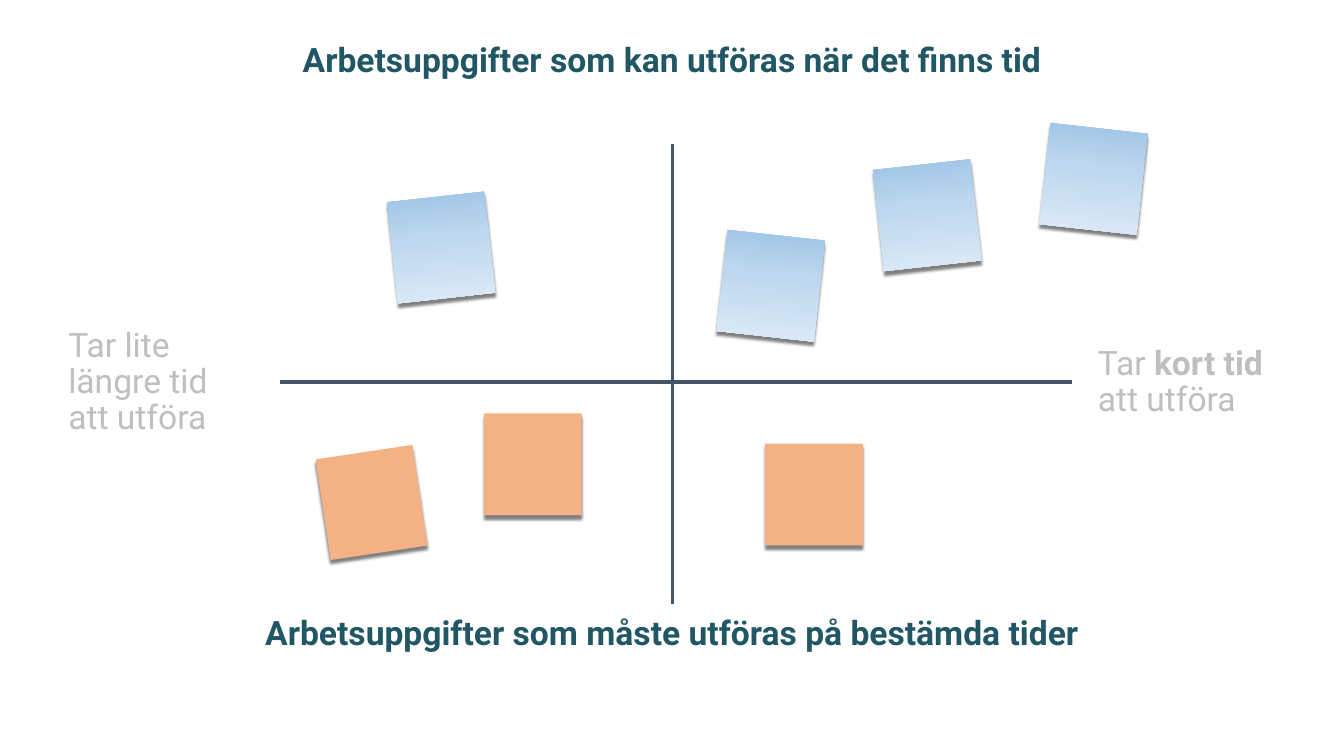
from copy import deepcopy

from lxml.etree import SubElement
from pptx import Presentation
from pptx.dml.color import RGBColor
from pptx.enum.shapes import MSO_CONNECTOR as Link, MSO_SHAPE as Shape
from pptx.enum.text import MSO_ANCHOR as Anchor, MSO_AUTO_SIZE as Fit, PP_ALIGN as Align
from pptx.oxml.ns import qn
from pptx.util import Inches, Pt

WIDE, HIGH = 13.33, 7.5
FONT = "Roboto"
TEAL, GREY, SLATE, WHITE, ORANGE = "215765", "BFBFBF", "44546A", "FFFFFF", "F4B183"
BLUES = [(0, "9DC3E6"), (0.41, "BDD7EE"), (1, "DEEBF7")]
NOTE = (0.97, 1.01)
TILT = 6.3

# Axis: start x, start y, end x, end y
AXES = [(2.78, 3.79, 10.63, 3.79), (6.67, 5.99, 6.67, 1.43)]
# Note: left, top, rotation
FIXED = [(4.8, 4.1, 0), (3.2, 4.48, -8.5), (7.59, 4.4, 0)]
LOOSE = [(7.16, 2.33, TILT), (3.89, 1.95, -TILT),
         (10.36, 1.27, TILT), (8.71, 1.63, -TILT)]

BOTTOM = [[("Arbetsuppgifter som måste utföras på bestämda tider", True)]]
TOP = [[("Arbetsuppgifter som kan utföras när det finns tid", True)]]
SHORT = [[("Tar ", False), ("kort tid ", True), ("att utföra", False)]]
LONG = [[("Tar lite längre tid", False)], [("att utföra", False)]]


def rgb(code):
    return RGBColor.from_string(code)


def write(box, lines, place, color=GREY, align=Align.LEFT):
    """Place a box and fill it with paragraphs of (text, bold) runs."""
    box.left, box.top, box.width, box.height = map(Inches, place)
    box.fill.solid()
    box.fill.fore_color.rgb = rgb(WHITE)
    frame = box.text_frame
    frame.word_wrap = True
    frame.auto_size = Fit.NONE
    frame.vertical_anchor = Anchor.MIDDLE
    for i, line in enumerate(lines):
        para = frame.add_paragraph() if i else frame.paragraphs[0]
        para.alignment = align
        para.line_spacing = 0.9
        para.space_before = Pt(0)
        for text, bold in line:
            run = para.add_run()
            run.text = text
            font = run.font
            font.name, font.size, font.bold = FONT, Pt(24), bold
            font.color.rgb = rgb(color)


def blend(fill):
    """Give a fill the blue gradient, running from top to bottom."""
    fill.gradient()
    fill.gradient_angle = 270
    first = fill.gradient_stops[0]._gs
    first.addnext(deepcopy(first))
    for stop, (spot, color) in zip(fill.gradient_stops, BLUES):
        stop.position = spot
        stop.color.rgb = rgb(color)


def shade(shape):
    """Add a soft shadow below a shape."""
    shape.shadow.inherit = False
    effects = shape._element.spPr.find(qn("a:effectLst"))
    drop = SubElement(effects, qn("a:outerShdw"), blurRad=str(Pt(2)),
                      dist=str(Pt(3)), dir="5400000", algn="t", rotWithShape="0")
    tone = SubElement(drop, qn("a:srgbClr"), val="000000")
    SubElement(tone, qn("a:alpha"), val="49000")


def main():
    deck = Presentation()
    deck.slide_width, deck.slide_height = Inches(WIDE), Inches(HIGH)
    slide = deck.slides.add_slide(deck.slide_layouts[5])
    shapes = slide.shapes

    write(shapes.title, BOTTOM, (0, 5.99, WIDE, 0.62), TEAL, Align.CENTER)
    for lines, place, color, align in [
        (TOP, (0, 0.23, WIDE, 0.77), TEAL, Align.CENTER),
        (SHORT, (10.79, 3.07, 2.26, 1.45), GREY, Align.LEFT),
        (LONG, (0.58, 3.07, 2.04, 1.45), GREY, Align.LEFT),
    ]:
        write(shapes.add_textbox(0, 0, 0, 0), lines, place, color, align)

    for ends in AXES:
        axis = shapes.add_connector(Link.STRAIGHT, *map(Inches, ends))
        axis.line.color.rgb = rgb(SLATE)
        axis.line.width = Pt(2.25)
        SubElement(axis._element.spPr, qn("a:effectLst"))

    for notes, loose in ((FIXED, False), (LOOSE, True)):
        for left, top, turn in notes:
            note = shapes.add_shape(Shape.RECTANGLE, *map(Inches, (left, top, *NOTE)))
            note.rotation = turn
            if loose:
                blend(note.fill)
            else:
                note.fill.solid()
                note.fill.fore_color.rgb = rgb(ORANGE)
            note.line.fill.background()
            shade(note)

    deck.save("out.pptx")


if __name__ == "__main__":
    main()
